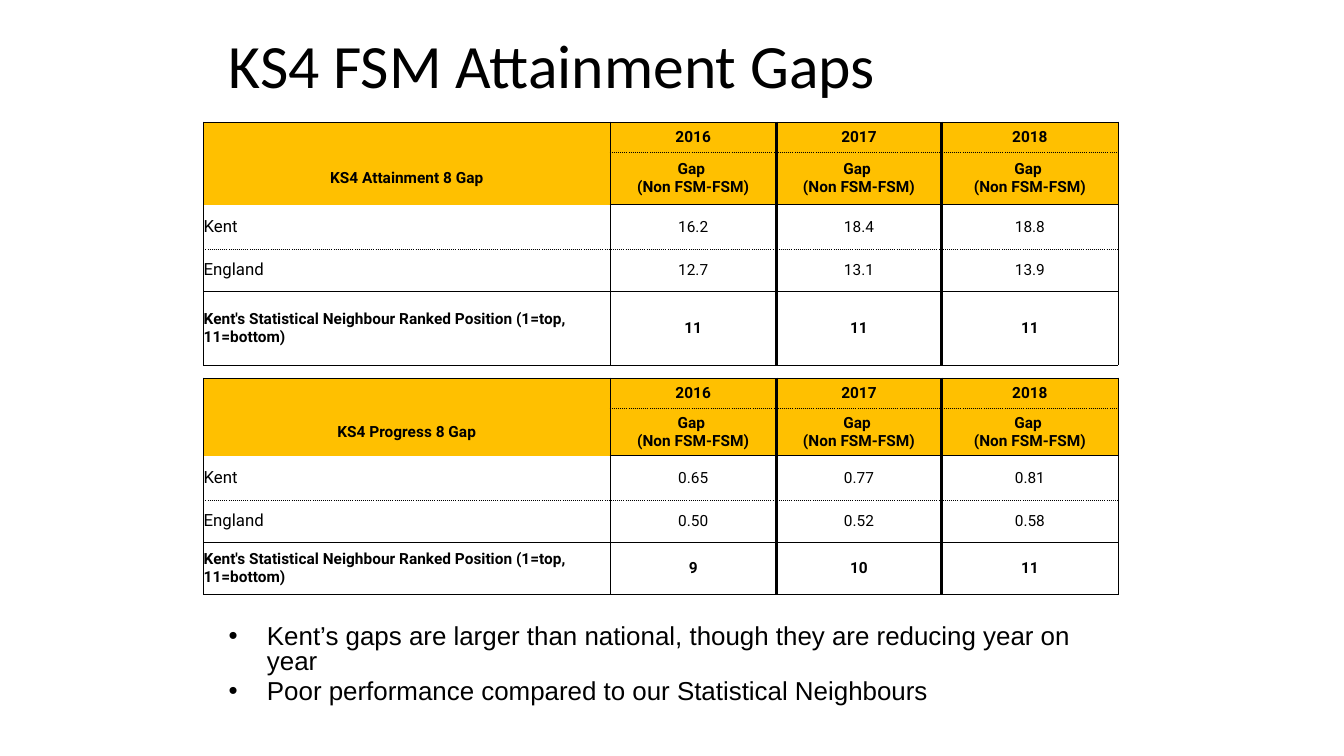
from dataclasses import dataclass
from lxml.etree import SubElement as Sub
from pptx import Presentation
from pptx.dml.color import RGBColor as RGB
from pptx.enum.text import MSO_ANCHOR as Anchor, PP_ALIGN as Align
from pptx.oxml.ns import qn
from pptx.util import Inches, Pt


@dataclass(frozen=True)
class Theme:
    ink: str = "000000"
    gold: str = "FFC000"
    title: float = 44
    body: float = 18.5
    label: float = 12
    cell: float = 11
    thin: float = 0.5
    thick: float = 2
    head: str = "Calibri"
    text: str = "Arial"
    grid: str = "Roboto"


THEME = Theme()
PLAIN = "{2D5ABB26-0587-4C30-8999-92F81FD0307C}"
COLS = (4.03, 1.65, 1.64, 1.75)
YEARS = ("2016", "2017", "2018")
RANK = "Kent's Statistical Neighbour Ranked Position (1=top, 11=bottom)"
GAP = "Gap \n(Non FSM-FSM)"
NOTES = (
    "Kent’s gaps are larger than national, though they are reducing year on year",
    "Poor performance compared to our Statistical Neighbours",
)


def add_run(para, text, size, face, bold=False):
    run = para.add_run()
    run.text = text
    run.font.size = Pt(size)
    run.font.name = face
    run.font.bold = bold
    run.font.color.rgb = RGB.from_string(THEME.ink)


def add_frame(slide, box):
    frame = slide.shapes.add_textbox(*map(Inches, box)).text_frame
    frame.word_wrap = True
    frame.vertical_anchor = Anchor.TOP
    return frame


def add_title(slide, box, text):
    para = add_frame(slide, box).paragraphs[0]
    para.line_spacing = 0.9
    add_run(para, text, THEME.title, THEME.head)


def add_notes(slide, box, notes):
    frame = add_frame(slide, box)
    for i, note in enumerate(notes):
        para = frame.add_paragraph() if i else frame.paragraphs[0]
        para.line_spacing = 0.8
        para.space_before = Pt(THEME.body * 0.2)
        props = para._p.get_or_add_pPr()
        props.set("marL", str(Inches(0.38)))
        props.set("indent", str(-Inches(0.38)))
        Sub(props, qn("a:buFont"), typeface=THEME.text)
        Sub(props, qn("a:buChar"), char="•")
        add_run(para, note, THEME.body, THEME.text)


def add_edge(cell, side, width, dash="solid"):
    line = Sub(cell._tc.get_or_add_tcPr(), qn("a:ln" + side), w=str(Pt(width)))
    if not width:
        Sub(line, qn("a:noFill"))
        return
    fill = Sub(line, qn("a:solidFill"))
    Sub(fill, qn("a:srgbClr"), val=THEME.ink)
    Sub(line, qn("a:prstDash"), val=dash)


def add_rules(cell, row, col):
    add_edge(cell, "L", THEME.thick if col > 1 else THEME.thin)
    add_edge(cell, "R", THEME.thick if col in (1, 2) else THEME.thin)
    for side, rule in (("T", row), ("B", row + 1)):
        bare = col == 0 and rule in (1, 2)
        dash = "sysDot" if rule in (1, 3) else "solid"
        add_edge(cell, side, 0 if bare else THEME.thin, dash)


def fill_cell(cell, row, col, text):
    cell.margin_left = cell.margin_right = 0
    cell.margin_top = cell.margin_bottom = 0
    cell.vertical_anchor = Anchor.MIDDLE
    add_rules(cell, row, col)
    if row < 2:
        cell.fill.solid()
        cell.fill.fore_color.rgb = RGB.from_string(THEME.gold)
    else:
        cell.fill.background()
    name = col == 0 and row > 1
    size = THEME.label if name and row < 4 else THEME.cell
    frame = cell.text_frame
    for i, part in enumerate(text.split("\n")):
        para = frame.add_paragraph() if i else frame.paragraphs[0]
        para.alignment = Align.LEFT if name else Align.CENTER
        add_run(para, part, size, THEME.grid, row in (0, 1, 4))


def add_grid(slide, box, highs, name, kent, nation, ranks):
    rows = (
        ("", *YEARS),
        (name, GAP, GAP, GAP),
        ("Kent", *kent),
        ("England", *nation),
        (RANK, *ranks),
    )
    table = slide.shapes.add_table(len(rows), len(COLS), *map(Inches, box)).table
    table.first_row = table.horz_banding = False
    table._tbl.tblPr.find(qn("a:tableStyleId")).text = PLAIN
    for col, wide in zip(table.columns, COLS):
        col.width = Inches(wide)
    for r, (high, row) in enumerate(zip(highs, rows)):
        table.rows[r].height = Inches(high)
        for c, text in enumerate(row):
            fill_cell(table.cell(r, c), r, c, text)


def main():
    deck = Presentation()
    deck.slide_width, deck.slide_height = Inches(13.33), Inches(7.5)
    slide = deck.slides.add_slide(deck.slide_layouts[6])
    add_title(slide, (2.17, 0.3, 9, 1.01), "KS4 FSM Attainment Gaps")
    add_grid(slide, (2.02, 1.21, 9.06, 2.41), (0.3, 0.52, 0.44, 0.42, 0.73),
             "KS4 Attainment 8 Gap", ("16.2", "18.4", "18.8"),
             ("12.7", "13.1", "13.9"), ("11", "11", "11"))
    add_notes(slide, (2.17, 6.16, 9, 1.01), NOTES)
    add_grid(slide, (2.02, 3.75, 9.06, 2.15), (0.3, 0.47, 0.44, 0.42, 0.52),
             "KS4 Progress 8 Gap", ("0.65", "0.77", "0.81"),
             ("0.50", "0.52", "0.58"), ("9", "10", "11"))
    deck.save("out.pptx")


if __name__ == "__main__":
    main()
